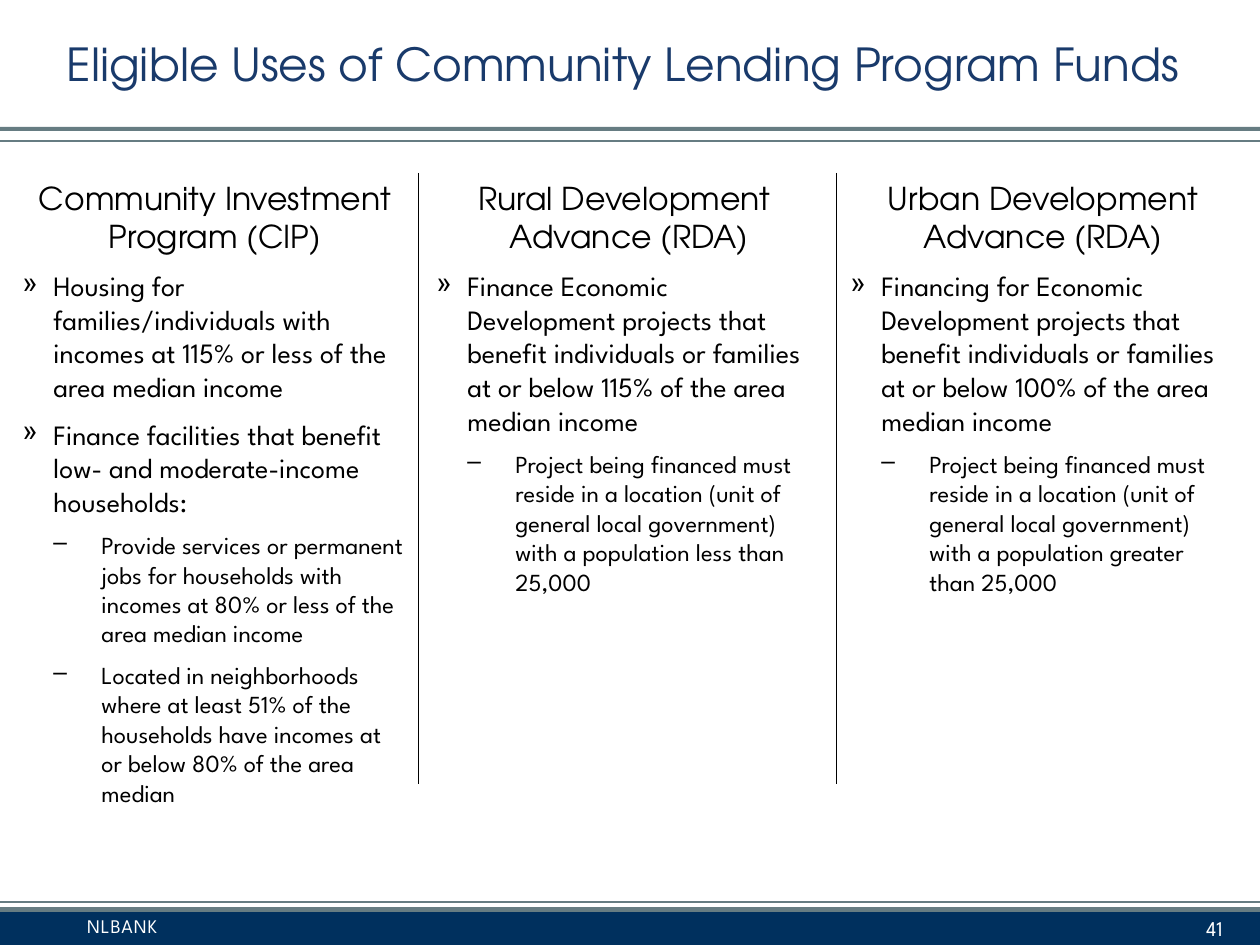
from lxml import etree
from pptx import Presentation
from pptx import util as u
from pptx.dml.color import RGBColor
from pptx.enum import shapes, text
from pptx.oxml.ns import qn


class Theme:
    navy, slate, blue = "00305E", "667C82", "193A6B"
    black, white = "000000", "FFFFFF"
    head_font, body_font = "TeX Gyre Adventor", "League Spartan"
    title = dict(name=head_font, size=u.Pt(26), color=blue)
    heading = dict(name=head_font, size=u.Pt(18), color=black)
    point = dict(name=body_font, size=u.Pt(16), color=black)
    detail = dict(name=body_font, size=u.Pt(14), color=black)
    footer = dict(name=body_font, size=u.Pt(11), color=white)
    number = dict(name=body_font, size=u.Pt(12), color=white)


# Bullet character, text indent, hanging indent, type and space before, by level
LEVELS = [
    ("»", 31, 31, Theme.point, 8),
    ("–", 79, 48, Theme.detail, 7),
]

COLUMNS = [
    ("Community Investment Program (CIP)", [
        (0, "Housing for families/individuals with incomes at 115% or less "
            "of the area median income"),
        (0, "Finance facilities that benefit low- and moderate-income households:"),
        (1, "Provide services or permanent jobs for households with incomes "
            "at 80% or less of the area median income"),
        (1, "Located in neighborhoods where at least 51% of the households "
            "have incomes at or below 80% of the area median"),
    ]),
    ("Rural Development \nAdvance (RDA)", [
        (0, "Finance Economic Development projects that benefit individuals "
            "or families at or below 115% of the area median income"),
        (1, "Project being financed must reside in a location (unit of general "
            "local government) with a population less than 25,000"),
    ]),
    ("Urban Development\nAdvance (RDA)", [
        (0, "Financing for Economic Development projects that benefit individuals "
            "or families at or below 100% of the area median income"),
        (1, "Project being financed must reside in a location (unit of general "
            "local government) with a population greater than 25,000"),
    ]),
]

WIDTH, HEIGHT = 1260, 945
COL_LEFT, COL_TOP, COL_W, COL_H, COL_STEP = 10, 173, 410, 624, 414
DIVIDER_STEP, DIVIDER_END = 418, 784


def px(n):
    return u.Emu(round(n * 914400 / 126))


def add_bar(s, y, h, color):
    sp = s.shapes.add_shape(shapes.MSO_SHAPE.RECTANGLE, 0, px(y), px(WIDTH), px(h))
    sp.shadow.inherit = False
    sp.fill.solid()
    sp.fill.fore_color.rgb = RGBColor.from_string(color)
    sp.line.fill.background()


def add_rule(s, x1, y1, x2, y2, color, weight):
    line = s.shapes.add_connector(
        shapes.MSO_CONNECTOR.STRAIGHT, px(x1), px(y1), px(x2), px(y2))
    line.line.color.rgb = RGBColor.from_string(color)
    line.line.width = u.Pt(weight)
    etree.SubElement(line._element.spPr, qn("a:effectLst"))


def add_box(s, x, y, w, h, **frame):
    tf = s.shapes.add_textbox(px(x), px(y), px(w), px(h)).text_frame
    for name, value in {"word_wrap": True, **frame}.items():
        setattr(tf, name, value)
    return tf


def write(p, words, style, **para):
    p.text = words
    for name, value in para.items():
        setattr(p, name, value)
    for r in p.runs:
        for name, value in style.items():
            if name == "color":
                r.font.color.rgb = RGBColor.from_string(value)
            else:
                setattr(r.font, name, value)


def add_bullet(p, char, indent, hang):
    pPr = p._p.get_or_add_pPr()
    pPr.set("marL", str(px(indent)))
    pPr.set("indent", str(-px(hang)))
    etree.SubElement(pPr, qn("a:buChar")).set("char", char)


def add_column(s, x, heading, points):
    tf = add_box(s, x, COL_TOP, COL_W, COL_H)
    write(tf.paragraphs[0], heading, Theme.heading, alignment=text.PP_ALIGN.CENTER)
    for level, words in points:
        char, indent, hang, style, gap = LEVELS[level]
        p = tf.add_paragraph()
        add_bullet(p, char, indent, hang)
        write(p, words, style, level=level, space_before=u.Pt(gap))


def add_bands(s):
    add_bar(s, 127, 4, Theme.slate)
    add_rule(s, 0, 141, WIDTH, 141, Theme.slate, 0.75)
    add_rule(s, 0, 902, WIDTH, 902, Theme.slate, 1)
    add_bar(s, 907, 5, Theme.slate)
    add_bar(s, 912, 33, Theme.navy)


def add_footer(s):
    tf = add_box(s, 0, 908, 924, 37, margin_left=px(87))
    write(tf.paragraphs[0], "NLBANK", Theme.footer)
    for r in tf.paragraphs[0].runs:
        r._r.get_or_add_rPr().set("spc", "50")
    tf = add_box(s, 941, 912, 294, 33, vertical_anchor=text.MSO_ANCHOR.MIDDLE)
    write(tf.paragraphs[0], "41", Theme.number, alignment=text.PP_ALIGN.RIGHT)


def main():
    prs = Presentation()
    prs.slide_width, prs.slide_height = px(WIDTH), px(HEIGHT)
    s = prs.slides.add_slide(prs.slide_layouts[6])
    add_bands(s)
    tf = add_box(s, 0, 0, WIDTH, 126, vertical_anchor=text.MSO_ANCHOR.MIDDLE)
    write(tf.paragraphs[0], "Eligible Uses of Community Lending Program Funds ",
          Theme.title, alignment=text.PP_ALIGN.CENTER)
    for i, (heading, points) in enumerate(COLUMNS):
        add_column(s, COL_LEFT + i * COL_STEP, heading, points)
        if i:
            x = i * DIVIDER_STEP
            add_rule(s, x, COL_TOP, x, DIVIDER_END, Theme.black, 0.5)
    add_footer(s)
    prs.save("out.pptx")


if __name__ == "__main__":
    main()
